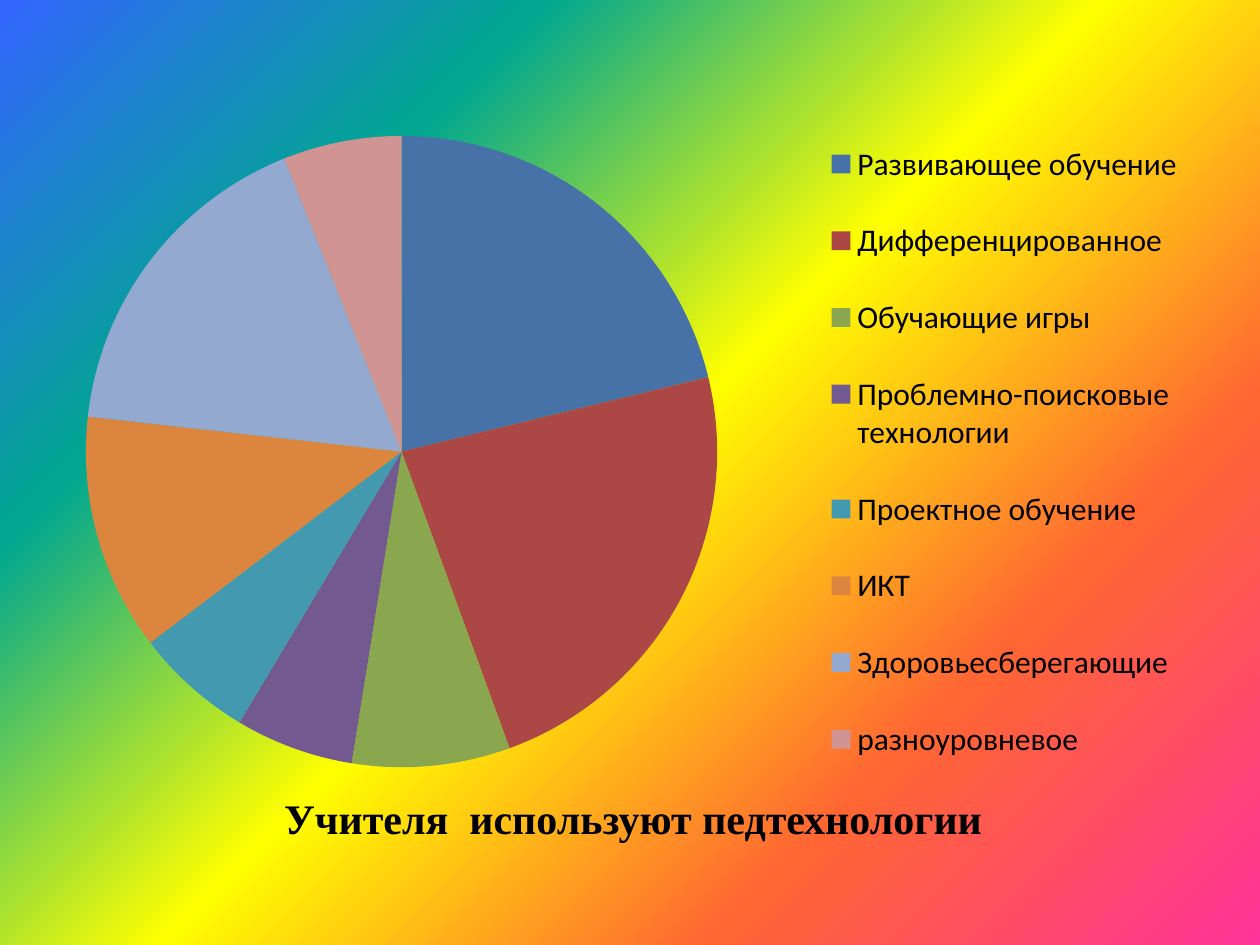
from lxml.etree import SubElement
from pptx import Presentation
from pptx.chart.data import CategoryChartData
from pptx.dml.color import RGBColor
from pptx.enum.chart import XL_CHART_TYPE, XL_LEGEND_POSITION
from pptx.enum.text import MSO_ANCHOR, PP_ALIGN
from pptx.oxml.ns import qn
from pptx.util import Inches, Pt


def color(hex_value):
    return RGBColor.from_string(hex_value)


def fill_layout(layout, x, y, w, h, inner=False):
    """Place a chart part by fractions of the chart's area."""
    manual = SubElement(layout, qn("c:manualLayout"))
    settings = [("layoutTarget", "inner")] if inner else []
    settings += [("xMode", "edge"), ("yMode", "edge")]
    settings += [("x", x), ("y", y), ("w", w), ("h", h)]
    for tag, value in settings:
        SubElement(manual, qn(f"c:{tag}")).set("val", str(value))


TECHNOLOGIES = [
    ("Развивающее обучение", 21, "4672A8"),
    ("Дифференцированное", 23, "AB4744"),
    ("Обучающие игры", 8, "8AA64F"),
    ("Проблемно-поисковые технологии", 6, "725990"),
    ("Проектное обучение", 6, "4299B0"),
    ("ИКТ", 12, "DC853E"),
    ("Здоровьесберегающие", 17, "93A9CF"),
    ("разноуровневое", 6, "D09493"),
]
RAINBOW = ["3366FF", "01A78F", "FFFF00", "FF6633", "FF3399"]

presentation = Presentation()
presentation.slide_width = Inches(10)
presentation.slide_height = Inches(7.5)
slide = presentation.slides.add_slide(presentation.slide_layouts[5])

# Diagonal rainbow background with evenly spaced stops
background = slide.background.fill
background.gradient()
background.gradient_angle = 315
stops = slide.element.find(".//" + qn("a:gsLst"))
for old_stop in list(stops):
    stops.remove(old_stop)
for index, hue in enumerate(RAINBOW):
    stop = SubElement(stops, qn("a:gs"), pos=str(index * 25000))
    SubElement(stop, qn("a:srgbClr"), val=hue)

# Title under the pie
title = slide.shapes.title
title.left, title.top = Inches(0.55), Inches(6.02)
title.width, title.height = Inches(8.95), Inches(0.94)
title.text_frame.vertical_anchor = MSO_ANCHOR.MIDDLE
heading = title.text_frame.paragraphs[0]
heading.alignment = PP_ALIGN.CENTER
run = heading.add_run()
run.text = "Учителя  используют педтехнологии"
run.font.name = "Times New Roman"
run.font.size = Pt(24)
run.font.bold = True
run.font.color.rgb = color("000000")

# Pie of technologies
shares = CategoryChartData()
shares.categories = [name for name, _, _ in TECHNOLOGIES]
shares.add_series("Series 1", [share for _, share, _ in TECHNOLOGIES])
pie = slide.shapes.add_chart(
    XL_CHART_TYPE.PIE, Inches(0.5), Inches(0.47), Inches(9.11), Inches(6.23), shares
).chart
pie.has_title = False
pie.font.name = "Calibri"
pie.font.size = Pt(18)
pie.font.color.rgb = color("000000")

plot = pie.plots[0]
plot.vary_by_categories = True
for index, (_, _, hue) in enumerate(TECHNOLOGIES):
    sector = plot.series[0].points[index].format
    sector.fill.solid()
    sector.fill.fore_color.rgb = color(hue)
    sector.line.fill.background()

plot_area = pie.element.find(".//" + qn("c:plotArea"))
plot_layout = plot_area.find(qn("c:layout"))
if plot_layout is None:
    plot_layout = SubElement(plot_area, qn("c:layout"))
    plot_area.insert(0, plot_layout)
fill_layout(plot_layout, 0.02, 0.09, 0.55, 0.82, inner=True)

pie.has_legend = True
pie.legend.position = XL_LEGEND_POSITION.RIGHT
pie.legend.include_in_layout = False
legend_layout = pie.element.find(".//" + qn("c:legend")).find(qn("c:layout"))
if legend_layout is None:
    legend_layout = SubElement(pie.element, qn("c:layout"))
    pie.element.find(".//" + qn("c:legendPos")).addnext(legend_layout)
fill_layout(legend_layout, 0.66, 0.06, 0.32, 0.88)

presentation.save("out.pptx")
